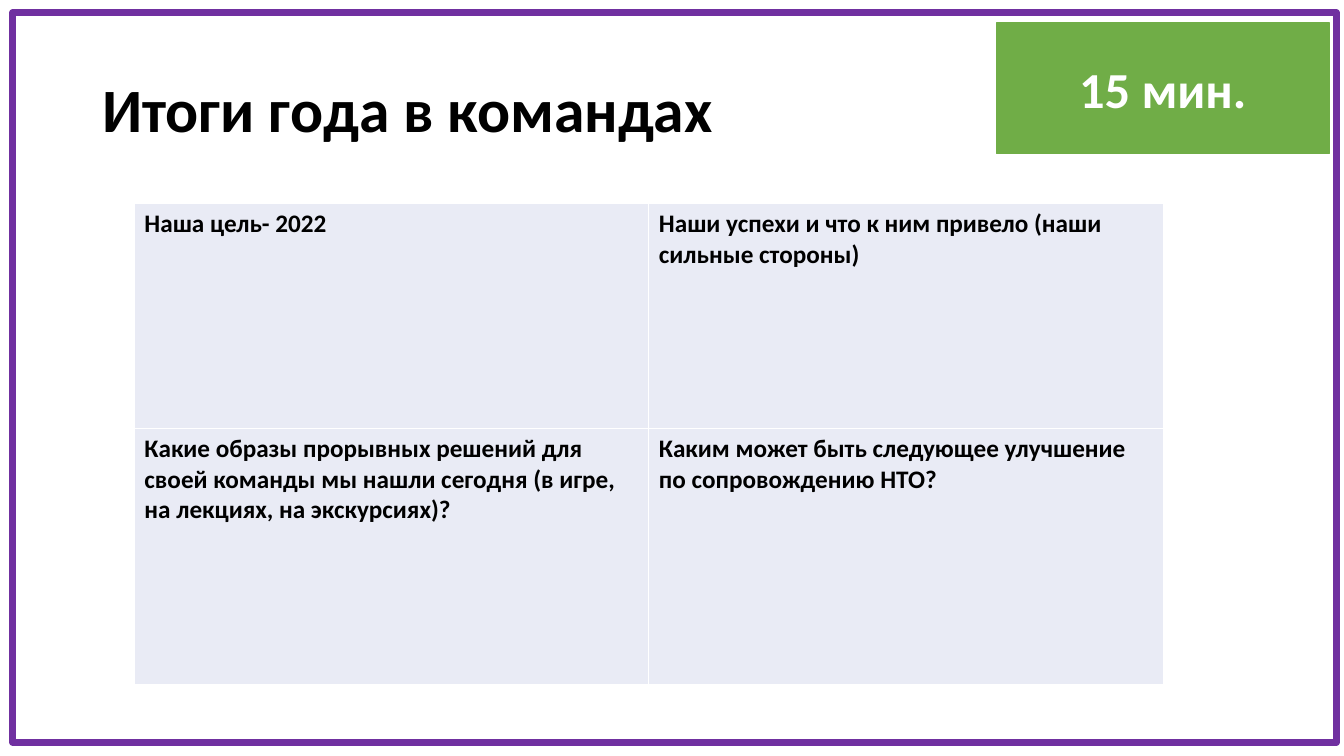
from pptx import Presentation
from pptx.dml.color import RGBColor
from pptx.enum.shapes import MSO_SHAPE
from pptx.enum.text import MSO_ANCHOR as ANCHOR, PP_ALIGN as ALIGN
from pptx.oxml import parse_xml
from pptx.oxml.ns import nsdecls
from pptx.util import Pt

PX = 9525
COLORS = {
    "ink": "000000",
    "white": "FFFFFF",
    "frame": "7030A0",
    "timer": "70AD47",
    "cell": "E9EBF5",
}


def rgb(name):
    return RGBColor.from_string(COLORS[name])


def emu(*lengths):
    return [n * PX for n in lengths]


class Deck:
    font = "Calibri"

    def __init__(self, width, height):
        self.prs = Presentation()
        self.prs.slide_width, self.prs.slide_height = emu(width, height)
        self.s = self.prs.slides.add_slide(self.prs.slide_layouts[6])

    def add_text(self, tf, text, size, color="ink", align=ALIGN.LEFT, spacing=1.0):
        tf.word_wrap = True
        p = tf.paragraphs[0]
        p.alignment = align
        p.line_spacing = spacing
        r = p.add_run()
        r.text = text
        r.font.name = self.font
        r.font.size = Pt(size)
        r.font.bold = True
        r.font.color.rgb = rgb(color)

    def title(self, box, text, size):
        tf = self.s.shapes.add_textbox(*emu(*box)).text_frame
        tf.vertical_anchor = ANCHOR.MIDDLE
        self.add_text(tf, text, size, spacing=0.9)

    def rect(self, box, line, weight, fill=None):
        sp = self.s.shapes.add_shape(MSO_SHAPE.RECTANGLE, *emu(*box))
        sp.shadow.inherit = False
        if fill:
            sp.fill.solid()
            sp.fill.fore_color.rgb = rgb(fill)
        else:
            sp.fill.background()
        sp.line.color.rgb = rgb(line)
        sp.line.width = Pt(weight)
        return sp

    def badge(self, box, text, size, fill):
        tf = self.rect(box, fill, 1, fill).text_frame
        tf.vertical_anchor = ANCHOR.MIDDLE
        self.add_text(tf, text, size, "white", ALIGN.CENTER)

    def border(self, cell, color, weight):
        tcPr = cell._tc.get_or_add_tcPr()
        for i, side in enumerate(("lnL", "lnR", "lnT", "lnB")):
            tcPr.insert(i, parse_xml(
                f'<a:{side} {nsdecls("a")} w="{Pt(weight)}"><a:solidFill>'
                f'<a:srgbClr val="{COLORS[color]}"/></a:solidFill></a:{side}>'))

    def table(self, left, top, widths, heights, rows, size):
        box = emu(left, top, sum(widths), sum(heights))
        tbl = self.s.shapes.add_table(len(heights), len(widths), *box).table
        tbl.first_row = tbl.horz_banding = False
        for col, width in zip(tbl.columns, emu(*widths)):
            col.width = width
        for row, height, texts in zip(tbl.rows, emu(*heights), rows):
            row.height = height
            for cell, text in zip(row.cells, texts):
                cell.fill.solid()
                cell.fill.fore_color.rgb = rgb("cell")
                self.border(cell, "white", 1)
                self.add_text(cell.text_frame, text, size)


def main():
    deck = Deck(1280, 720)
    deck.title((88, 38, 1104, 139), "Итоги года в командах", 44)
    deck.rect((12, 12, 1261, 695), "frame", 4.5)
    deck.table(128, 194, (490, 490), (214, 244), (
        ("Наша цель- 2022",
         "Наши успехи и что к ним привело (наши сильные стороны)"),
        ("Какие образы прорывных решений для своей команды мы нашли сегодня "
         "(в игре, на лекциях, на экскурсиях)?",
         "Каким может быть следующее улучшение по сопровождению НТО?"),
    ), 18)
    deck.badge((949, 22, 317, 124), "15 мин.", 36, "timer")
    deck.prs.save("out.pptx")


if __name__ == "__main__":
    main()
